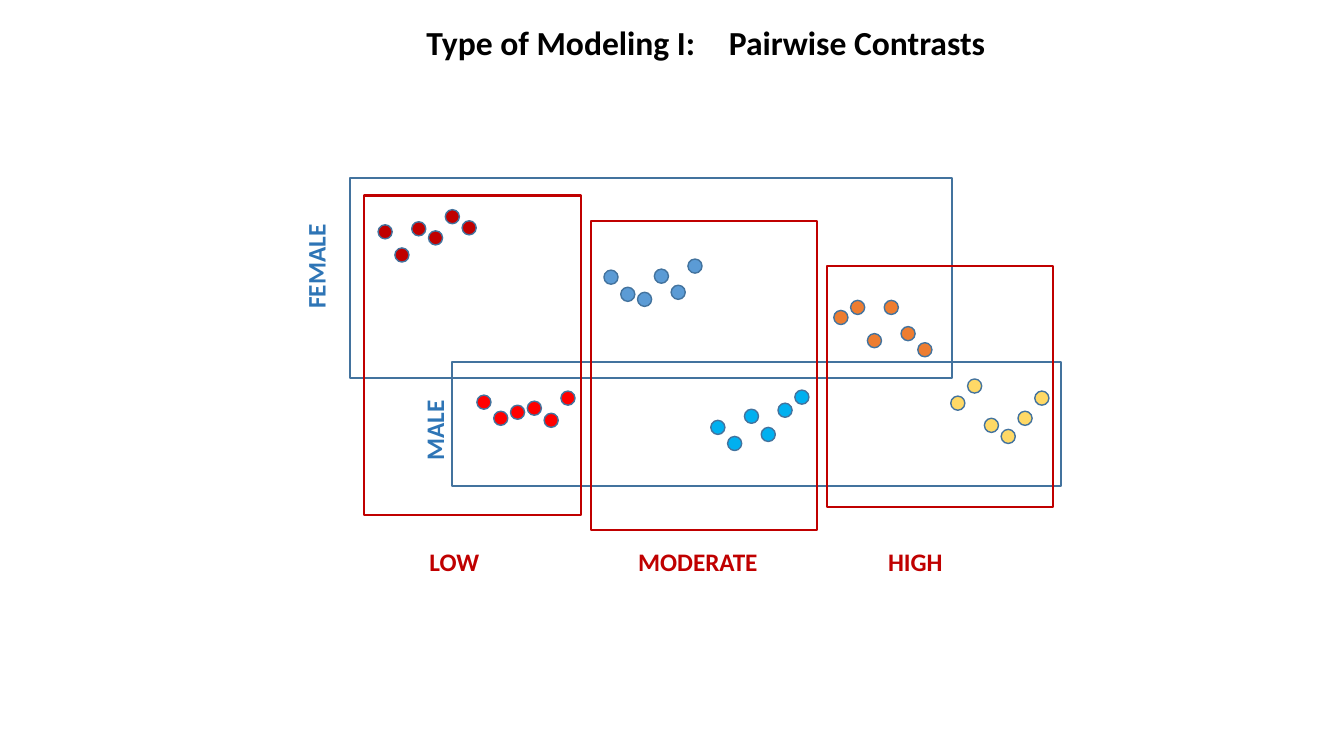
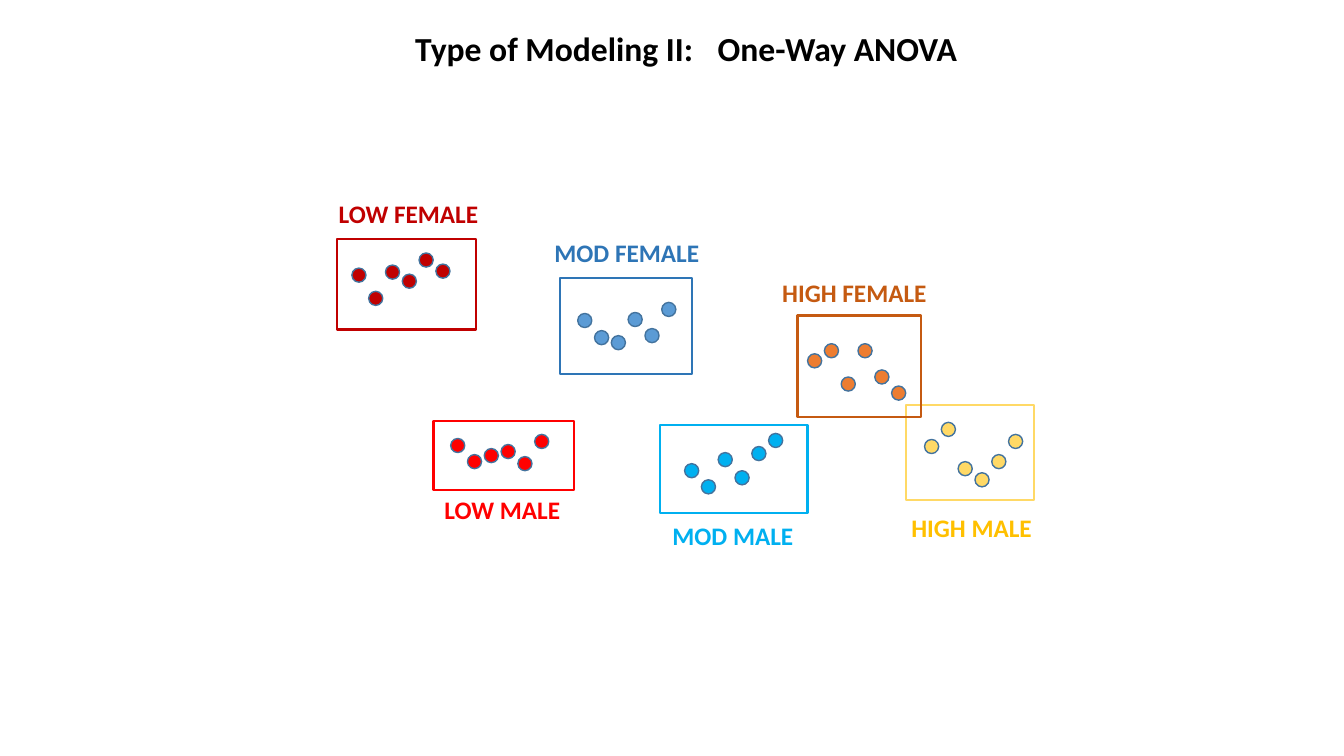
from pptx import Presentation
from pptx.dml.color import RGBColor
from pptx.enum.shapes import MSO_SHAPE as Kind
from pptx.oxml.ns import qn
from pptx.util import Inches, Pt
from lxml.etree import SubElement as Sub

FONT = "Calibri"
BLACK, EDGE, NAVY, BLUE = "000000", "43739E", "2E75B6", "5B9BD5"
DARK, RED, SKY = "C00000", "FF0000", "00B0F0"
ORANGE, RUST, YELLOW, GOLD = "ED7D31", "C55A11", "FFD966", "FFC000"
DOT, STEP = 0.14, 1 / 6
STOPS = [2.07, 4.55]

CLUSTERS = [
    (BLUE, 5.99, [2.68, 2.85, 2.9, 2.67, 2.83, 2.57]),
    (ORANGE, 8.27, [3.08, 2.98, 3.31, 2.98, 3.24, 3.4]),
    (DARK, 3.75, [2.23, 2.46, 2.2, 2.29, 2.08, 2.19]),
    (SKY, 7.05, [4.17, 4.33, 4.06, 4.24, 4, 3.87]),
    (YELLOW, 9.43, [3.93, 3.76, 4.15, 4.26, 4.08, 3.88]),
    (RED, 4.73, [3.92, 4.08, 4.02, 3.98, 4.1, 3.88]),
]

SLIDES = [
    {
        "title": ("Type of Modeling I:\tPairwise Contrasts", 4.13, 0.17, 5.8),
        "shift": (0, 0),
        "frames": [
            (EDGE, 3.47, 1.77, 5.97, 1.98),
            (EDGE, 4.48, 3.59, 6.04, 1.23),
            (DARK, 3.61, 1.94, 2.15, 3.17),
            (DARK, 5.86, 2.19, 2.24, 3.07),
            (DARK, 8.2, 2.64, 2.24, 2.39),
        ],
        "labels": [
            ("FEMALE", NAVY, 2.61, 2.44, 1.04, 270),
            ("MALE", NAVY, 3.9, 4.06, 0.81, 270),
            ("LOW\tMODERATE\tHIGH", DARK, 4.16, 5.37, 6.49, 0),
        ],
    },
    {
        "title": ("Type of Modeling II:\tOne-Way ANOVA", 4.02, 0.23, 5.63),
        "shift": (-0.26, 0.43),
        "frames": [
            (RED, 4.3, 4.18, 1.39, 0.68),
            (YELLOW, 8.99, 4.02, 1.27, 0.94),
            (DARK, 3.34, 2.37, 1.38, 0.9),
            (NAVY, 5.55, 2.76, 1.31, 0.95),
            (RUST, 7.91, 3.13, 1.23, 1.01),
            (SKY, 6.55, 4.22, 1.46, 0.87),
        ],
        "labels": [
            ("LOW FEMALE", DARK, 3.26, 1.92, 1.6, 0),
            ("LOW MALE", RED, 4.31, 4.86, 1.36, 0),
            ("MOD MALE", SKY, 6.57, 5.11, 1.41, 0),
            ("MOD FEMALE", NAVY, 5.4, 2.31, 1.65, 0),
            ("HIGH FEMALE", RUST, 7.66, 2.7, 1.65, 0),
            ("HIGH MALE", GOLD, 8.94, 5.03, 1.41, 0),
        ],
    },
]


def color(code):
    return RGBColor.from_string(code)


def add_form(shapes, kind, box, line, width, fill=None):
    form = shapes.add_shape(kind, *map(Inches, box))
    form.shadow.inherit = False
    form.line.color.rgb = color(line)
    form.line.width = Pt(width)
    if fill:
        form.fill.solid()
        form.fill.fore_color.rgb = color(fill)
    else:
        form.fill.background()


def add_text(shapes, text, box, size, ink, turn=0):
    label = shapes.add_textbox(*map(Inches, box))
    label.rotation = turn
    label.text_frame.word_wrap = False
    line = label.text_frame.paragraphs[0]
    line.text = text
    line.font.name = FONT
    line.font.size = Pt(size)
    line.font.bold = True
    line.font.color.rgb = color(ink)
    return line


def add_tabs(line):
    props = line._p.get_or_add_pPr()
    tabs = Sub(props, qn("a:tabLst"))
    for stop in STOPS:
        Sub(tabs, qn("a:tab"), pos=str(Inches(stop)), algn="l")
    props.insert(0, tabs)


def add_dots(shapes, shift):
    dots = shapes.add_group_shape().shapes
    dx, dy = shift
    for fill, left, tops in CLUSTERS:
        for i, top in enumerate(tops):
            box = (left + dx + i * STEP, top + dy, DOT, DOT)
            add_form(dots, Kind.OVAL, box, EDGE, 1, fill)


def build(deck, page):
    shapes = deck.slides.add_slide(deck.slide_layouts[6]).shapes
    add_dots(shapes, page["shift"])
    for line, *box in page["frames"]:
        add_form(shapes, Kind.RECTANGLE, box, line, 1.5)
    for text, ink, left, top, width, turn in page["labels"]:
        line = add_text(shapes, text, (left, top, width, 0.4), 18, ink, turn)
        if "\t" in text:
            add_tabs(line)
    text, *place = page["title"]
    add_text(shapes, text, (*place, 0.5), 24, BLACK)


def main():
    deck = Presentation()
    deck.slide_width = Inches(13.33)
    deck.slide_height = Inches(7.5)
    for page in SLIDES:
        build(deck, page)
    deck.save("out.pptx")


if __name__ == "__main__":
    main()
